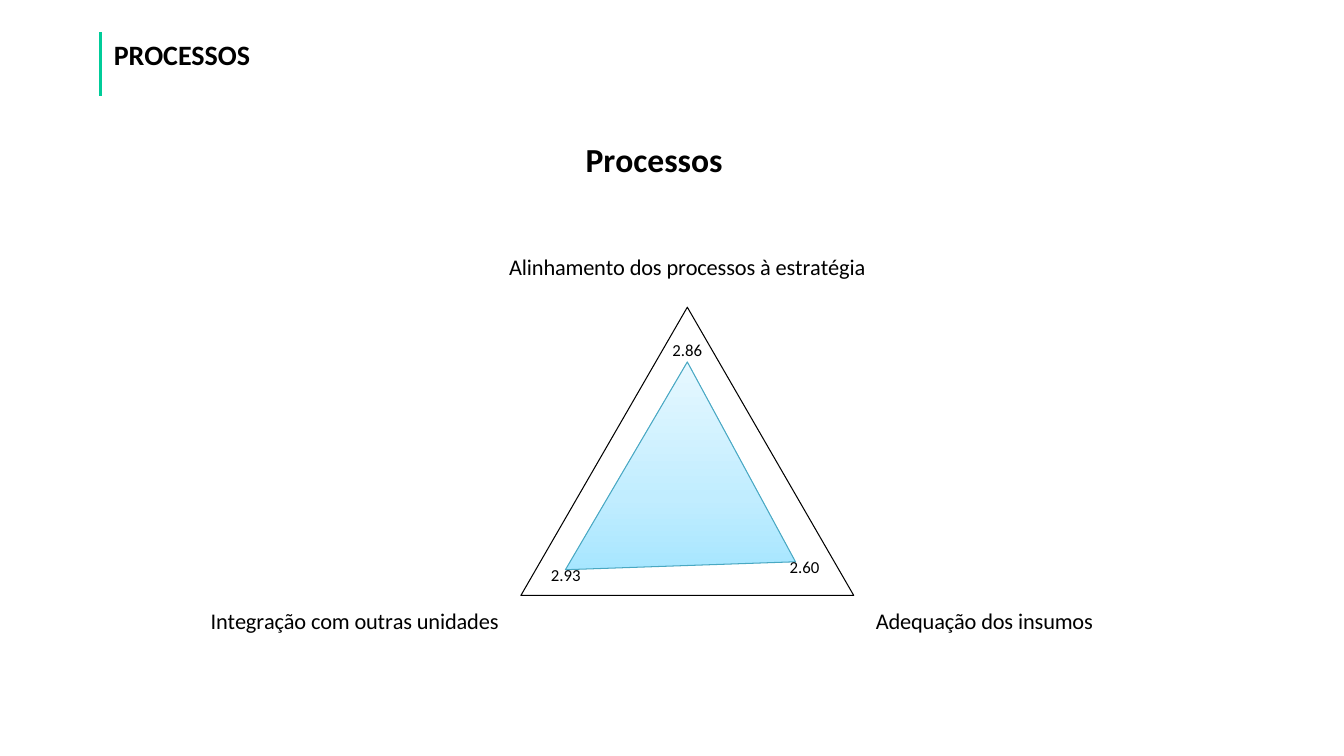
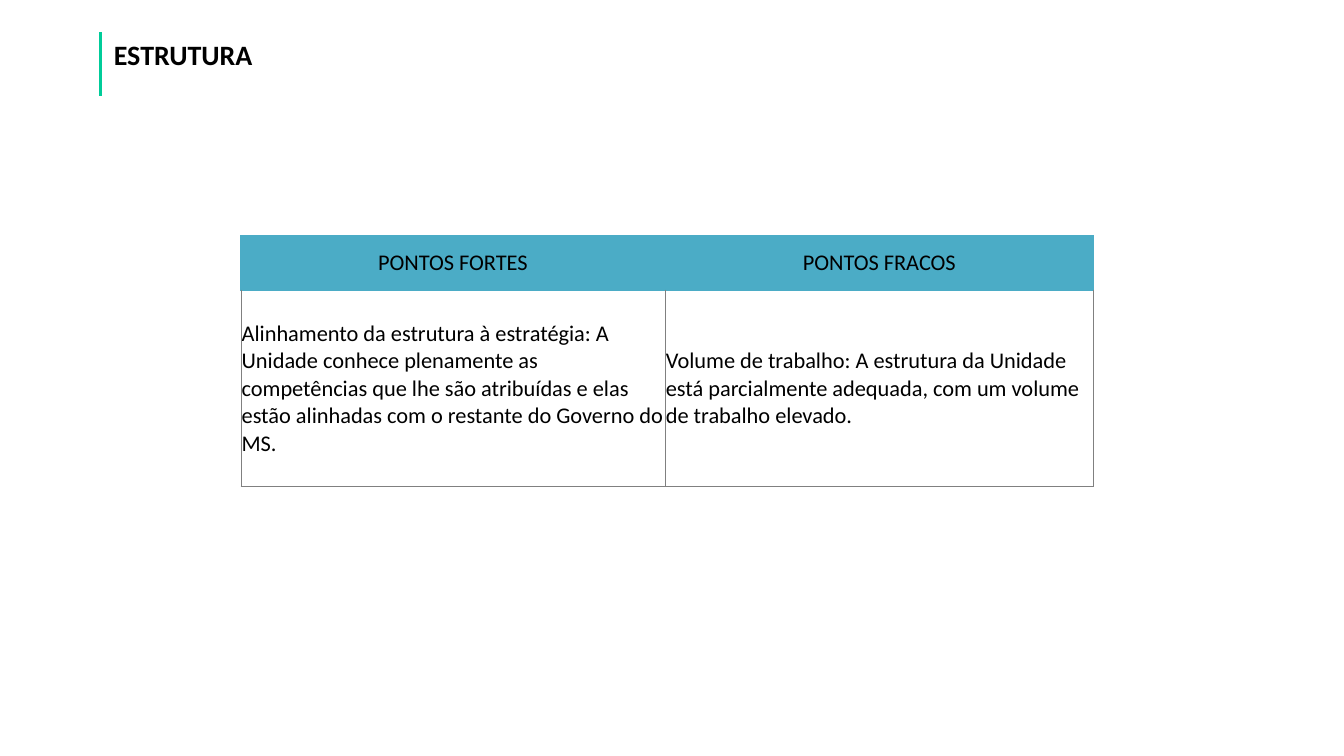
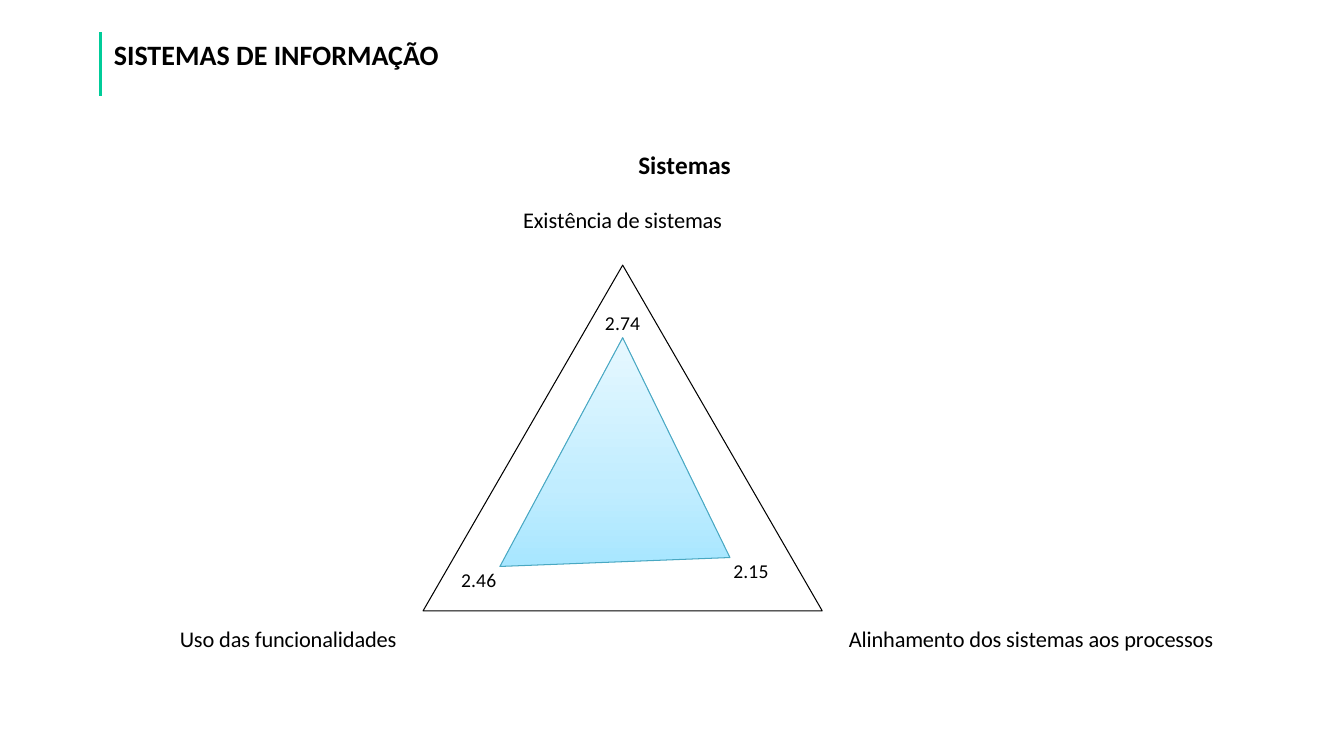
import lxml.etree
import pptx
import pptx.chart.data
import pptx.dml.color
import pptx.enum.chart
import pptx.enum.shapes
import pptx.enum.text
import pptx.oxml
import pptx.oxml.ns
import pptx.util
from pptx.util import Cm

BLACK = pptx.dml.color.RGBColor(0x00, 0x00, 0x00)
GREEN = pptx.dml.color.RGBColor(0x00, 0xCC, 0x99)
TEAL = pptx.dml.color.RGBColor(0x4B, 0xAC, 0xC6)
GRAY = pptx.dml.color.RGBColor(0x80, 0x80, 0x80)
LIGHT_GRAY = pptx.dml.color.RGBColor(0xD9, 0xD9, 0xD9)
AREA_EDGE = pptx.dml.color.RGBColor(0x49, 0xA8, 0xC2)
FONT = "Calibri"
qn = pptx.oxml.ns.qn

# Area shading: position in percent, colour
SHADING = [(0, "A7E6FF"), (35, "C1EDFF"), (100, "E7F8FF")]


def style(font, size, color=BLACK, bold=False):
    font.name = FONT
    font.size = pptx.util.Pt(size)
    font.color.rgb = color
    font.bold = bold


def place(part, index, inner=False, **fractions):
    """Give a chart part a manual layout, as fractions of the chart."""
    for old in part.findall(qn("c:layout")):
        part.remove(old)
    layout = lxml.etree.Element(qn("c:layout"))
    manual = lxml.etree.SubElement(layout, qn("c:manualLayout"))
    settings = {}
    if inner:
        settings["layoutTarget"] = "inner"
    if part.tag != qn("c:dLbl"):
        settings.update(xMode="edge", yMode="edge")
    settings.update(fractions)
    for tag, value in settings.items():
        lxml.etree.SubElement(manual, qn("c:" + tag)).set("val", str(value))
    part.insert(index, layout)


deck = pptx.Presentation()
deck.slide_width = Cm(33.87)
deck.slide_height = Cm(19.05)

# Green rule and heading on every slide
slides = []
for heading in ["PROCESSOS", "ESTRUTURA", "SISTEMAS DE INFORMAÇÃO"]:
    slide = deck.slides.add_slide(deck.slide_layouts[6])
    slides.append(slide)
    rule = slide.shapes.add_connector(
        pptx.enum.shapes.MSO_CONNECTOR.STRAIGHT,
        Cm(2.54), Cm(0.81), Cm(2.54), Cm(2.41))
    rule.line.color.rgb = GREEN
    rule.line.width = pptx.util.Pt(2.25)
    lxml.etree.SubElement(rule._element.spPr, qn("a:effectLst"))
    heading_box = slide.shapes.add_textbox(Cm(2.62), Cm(0.81), Cm(21.82), Cm(1.11))
    heading_box.text_frame.word_wrap = True
    heading_line = heading_box.text_frame.paragraphs[0]
    heading_line.text = heading
    style(heading_line.font, 20, bold=True)

# Radar charts: processes and systems
radars = [
    dict(slide=slides[0], title="Processos", title_size=24, title_x=0.42,
         frame=(4.67, 2.82, 23.65, 15.88), label_size=12,
         plot=dict(x=0.33, y=0.31, w=0.41, h=0.61),
         scores={"Alinhamento dos processos à estratégia": 2.86,
                 "Adequação dos insumos": 2.6,
                 "Integração com outras unidades": 2.93},
         shifts=[(0, 0.01), (-0.01, -0.01), (0.02, -0.01)]),
    dict(slide=slides[2], title="Sistemas", title_size=18, title_x=0.45,
         frame=(3.4, 3.12, 27.94, 15.49), label_size=14,
         plot=dict(x=0.23, y=0.23, w=0.42, h=0.75),
         scores={"Existência de sistemas": 2.74,
                 "Alinhamento dos sistemas aos processos": 2.15,
                 "Uso das funcionalidades": 2.46},
         shifts=[(0, 0.01)]),
]
for radar in radars:
    scores = pptx.chart.data.CategoryChartData(number_format="0.00")
    scores.categories = list(radar["scores"])
    scores.add_series("Series 1", list(radar["scores"].values()))
    chart = radar["slide"].shapes.add_chart(
        pptx.enum.chart.XL_CHART_TYPE.RADAR_FILLED,
        *[Cm(length) for length in radar["frame"]], scores).chart
    style(chart.font, 10)
    chart.has_legend = False
    chart.plots[0].vary_by_categories = False

    # Title and plot position
    title_line = chart.chart_title.text_frame.paragraphs[0]
    title_line.text = radar["title"]
    style(title_line.font, radar["title_size"], bold=True)
    chart.chart_title.include_in_layout = False
    place(chart.chart_title._element, 1, x=radar["title_x"], y=0.03)
    place(chart._chartSpace.chart.plotArea, 0, inner=True, **radar["plot"])

    # Axes
    topics = chart.category_axis
    topics.has_major_gridlines = False
    topics.format.line.color.rgb = LIGHT_GRAY
    topics.format.line.width = pptx.util.Pt(0.75)
    style(topics.tick_labels.font, 16)
    scale = chart.value_axis
    scale.minimum_scale, scale.maximum_scale, scale.major_unit = 0, 4, 4
    scale.tick_label_position = pptx.enum.chart.XL_TICK_LABEL_POSITION.NONE
    scale.format.line.fill.background()
    scale.has_major_gridlines = True
    scale.major_gridlines.format.line.color.rgb = BLACK
    scale.major_gridlines.format.line.width = pptx.util.Pt(0.75)
    for axis in (topics, scale):
        axis.major_tick_mark = pptx.enum.chart.XL_TICK_MARK.NONE
        axis.minor_tick_mark = pptx.enum.chart.XL_TICK_MARK.NONE

    # Shaded area
    area = chart.plots[0].series[0]
    area.format.line.color.rgb = AREA_EDGE
    area.format.line.width = pptx.util.Pt(0.75)
    area.format.fill.gradient()
    area.format.fill.gradient_angle = 90
    stops = area._element.find(".//" + qn("a:gsLst"))
    for stop in list(stops):
        stops.remove(stop)
    for percent, color in SHADING:
        stop = lxml.etree.SubElement(stops, qn("a:gs"), pos=str(percent * 1000))
        lxml.etree.SubElement(stop, qn("a:srgbClr"), val=color)
    area._element.find(".//" + qn("a:lin")).set("ang", str(270 * 60000))

    # Score labels
    labels = area.data_labels
    labels.show_value = True
    labels.number_format = "0.00"
    labels.number_format_is_linked = False
    style(labels.font, radar["label_size"])
    for number in range(len(radar["shifts"])):
        style(area.points[number].data_label.font, radar["label_size"])
    for label, (dx, dy) in zip(area._element.iter(qn("c:dLbl")), radar["shifts"]):
        place(label, 1, x=dx, y=dy)

# Table of strong and weak points
points = [
    ["PONTOS FORTES", "PONTOS FRACOS"],
    ["Alinhamento da estrutura à estratégia: A Unidade conhece plenamente as "
     "competências que lhe são atribuídas e elas estão alinhadas com o restante "
     "do Governo do MS.",
     "Volume de trabalho: A estrutura da Unidade está parcialmente adequada, "
     "com um volume de trabalho elevado."],
]
table = slides[1].shapes.add_table(
    2, 2, Cm(6.07), Cm(5.94), Cm(21.49), Cm(6.32)).table
table.first_row = False
table.horz_banding = False
table.columns[0].width, table.columns[1].width = Cm(10.69), Cm(10.8)
table.rows[0].height, table.rows[1].height = Cm(1.37), Cm(4.95)
for row, texts in enumerate(points):
    for column, text in enumerate(texts):
        cell = table.cell(row, column)
        is_header = row == 0
        cell.margin_left = cell.margin_right = cell.margin_top = Cm(0.02)
        cell.margin_bottom = 0
        cell.vertical_anchor = pptx.enum.text.MSO_ANCHOR.MIDDLE
        cell_line = cell.text_frame.paragraphs[0]
        cell_line.text = text
        style(cell_line.font, 16)
        borders = cell._tc.get_or_add_tcPr()
        for side in ("lnL", "lnR", "lnT", "lnB"):
            is_teal = is_header or side == "lnT"
            border = lxml.etree.SubElement(
                borders, qn("a:" + side), w=str(pptx.util.Pt(1 if is_teal else 0.5)))
            paint = lxml.etree.SubElement(border, qn("a:solidFill"))
            lxml.etree.SubElement(
                paint, qn("a:srgbClr"), val=str(TEAL if is_teal else GRAY))
        if is_header:
            cell_line.alignment = pptx.enum.text.PP_ALIGN.CENTER
            cell.fill.solid()
            cell.fill.fore_color.rgb = TEAL
        else:
            cell.fill.background()

deck.save("out.pptx")
